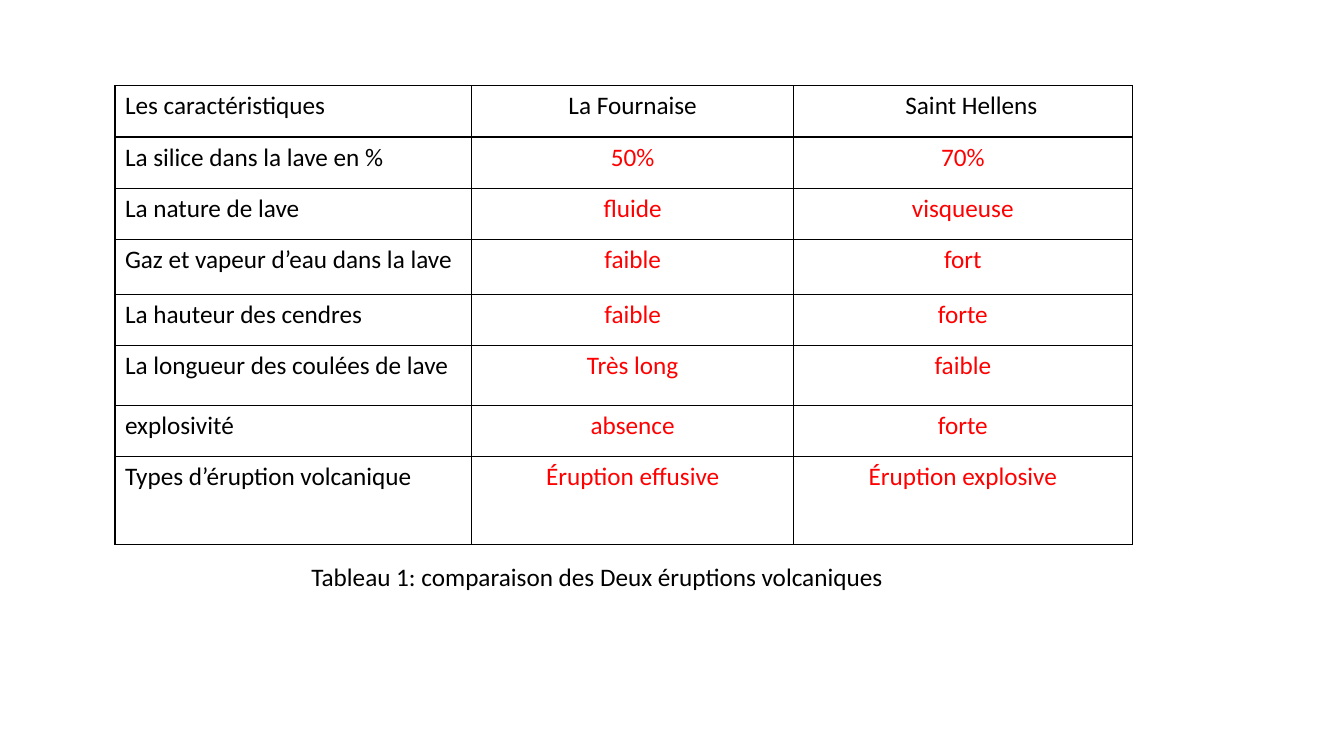
import pptx
import pptx.util
import pptx.dml.color
import pptx.enum.text
import pptx.oxml
import pptx.oxml.ns

Inches = pptx.util.Inches
Align = pptx.enum.text.PP_ALIGN

BLACK = "000000"
RED = "FF0000"


def color(value):
    return pptx.dml.color.RGBColor.from_string(value)


def write_text(frame, text, font="Calibri", size=18, fill=BLACK, align=Align.LEFT):
    paragraph = frame.paragraphs[0]
    paragraph.alignment = align
    run = paragraph.add_run()
    run.text = text
    run.font.name = font
    run.font.size = pptx.util.Pt(size)
    run.font.color.rgb = color(fill)


class VolcanoSlide:
    def __init__(self, presentation, border=BLACK, border_width=1):
        self.slide = presentation.slides.add_slide(presentation.slide_layouts[6])
        self.border = border
        self.border_width = border_width

    def outline(self, cell):
        properties = cell._tc.get_or_add_tcPr()
        width = pptx.util.Pt(self.border_width)
        for position, side in enumerate(("lnL", "lnR", "lnT", "lnB")):
            line = pptx.oxml.parse_xml(
                f'<a:{side} {pptx.oxml.ns.nsdecls("a")} w="{width}">'
                f'<a:solidFill><a:srgbClr val="{self.border}"/></a:solidFill>'
                f'</a:{side}>'
            )
            properties.insert(position, line)

    def table(self, left, top, widths, heights, rows):
        table = self.slide.shapes.add_table(
            len(rows), len(widths), Inches(left), Inches(top),
            Inches(sum(widths)), Inches(sum(heights)),
        ).table
        table.first_row = False
        table.horz_banding = False
        for column, width in zip(table.columns, widths):
            column.width = Inches(width)
        for row, height in zip(table.rows, heights):
            row.height = Inches(height)
        for r, texts in enumerate(rows):
            for c, text in enumerate(texts):
                cell = table.cell(r, c)
                cell.fill.background()
                self.outline(cell)
                write_text(
                    cell.text_frame, text,
                    fill=RED if r and c else BLACK,
                    align=Align.CENTER if c else Align.LEFT,
                )
        return table

    def caption(self, left, top, width, height, text):
        box = self.slide.shapes.add_textbox(
            Inches(left), Inches(top), Inches(width), Inches(height))
        frame = box.text_frame
        frame.word_wrap = True
        frame.auto_size = pptx.enum.text.MSO_AUTO_SIZE.SHAPE_TO_FIT_TEXT
        write_text(frame, text)


def main():
    presentation = pptx.Presentation()
    presentation.slide_width = Inches(13.33)
    presentation.slide_height = Inches(7.5)
    volcanoes = VolcanoSlide(presentation)
    comparison = volcanoes.table(
        1.14, 0.85,
        [3.54, 3.19, 3.36],
        [0.51, 0.51, 0.51, 0.54, 0.51, 0.59, 0.51, 0.87],
        [
            ("Les caractéristiques", "La Fournaise", "Saint Hellens"),
            ("La silice dans la lave en %", "50%", "70%"),
            ("La nature de lave", "fluide", "visqueuse"),
            ("Gaz et vapeur d’eau dans la lave", "faible", "fort"),
            ("La hauteur des cendres", "faible", "forte"),
            ("La longueur des coulées de lave", "Très long", "faible"),
            ("explosivité", "absence", "forte"),
            ("Types d’éruption volcanique", "Éruption effusive", "Éruption explosive"),
        ],
    )
    comparison.cell(0, 2).margin_left = Inches(0.27)
    volcanoes.caption(2.99, 5.52, 7.86, 0.4,
                      "Tableau 1: comparaison des Deux éruptions volcaniques")
    presentation.save("out.pptx")


if __name__ == "__main__":
    main()
